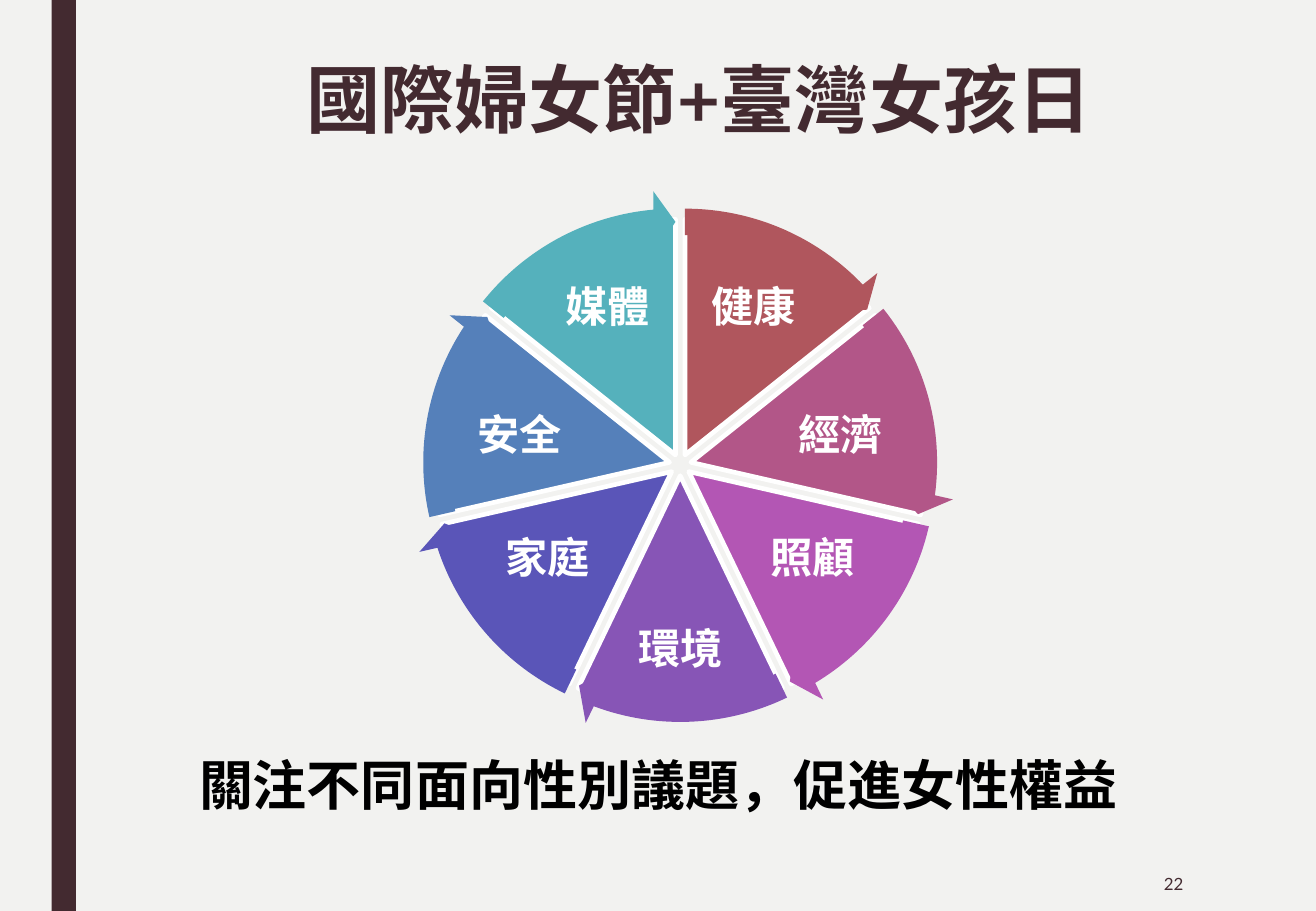
import math

from pptx import Presentation
from pptx import util as u
from pptx.dml.color import RGBColor
from pptx.enum import shapes, text

HUES = {
    "back": "F2F2F0", "dark": "432A30", "white": "FFFFFF", "black": "000000",
    "健康": "B0565D", "經濟": "B25688", "照顧": "B356B4", "環境": "8755B6",
    "家庭": "5A55B8", "安全": "5580BA", "媒體": "55B1BC",
}
TOPICS = ["健康", "經濟", "照顧", "環境", "家庭", "安全", "媒體"]
SPOTS = [(3.6, 15.24, 5.52, 4.44), (7.92, 21.57, 6.36, 3.9),
         (6.54, 27.66, 5.52, 4.32), (0, 32.13, 5.4, 3.9)]
COLS, ROWS, CELL = 65, 45, u.Inches(1) / 6
MID_X, MID_Y, SHIFT = 33.6, 22.96, 0.54
PIE, RING = 23.28, 26.16
TURN, TOP = 216, 162
STEP = TURN / len(TOPICS)


class Deck:
    """Draws styled elements on one slide laid out in square grid cells."""

    def __init__(self):
        self.prs = Presentation()
        self.prs.slide_width = self.cells(COLS)
        self.prs.slide_height = self.cells(ROWS)
        self.slide = self.prs.slides.add_slide(self.prs.slide_layouts[6])
        fill = self.slide.background.fill
        fill.solid()
        fill.fore_color.rgb = self.hue("back")

    def cells(self, count):
        return u.Emu(round(count * CELL))

    def hue(self, name):
        return RGBColor.from_string(HUES[name])

    def shape(self, kind, box, fill, adjust=(), edge=0):
        item = self.slide.shapes.add_shape(kind, *map(self.cells, box))
        item.shadow.inherit = False
        item.fill.solid()
        item.fill.fore_color.rgb = self.hue(fill)
        for i, value in enumerate(adjust):
            item.adjustments[i] = value
        if edge:
            item.line.color.rgb = self.hue("white")
            item.line.width = u.Pt(edge)
        else:
            item.line.fill.background()

    def words(self, box, copy, size, hue, align="LEFT", face="Lato", bold=True,
              middle=False, space=1, inset=None, wrap=True):
        frame = self.slide.shapes.add_textbox(*map(self.cells, box)).text_frame
        frame.word_wrap = wrap
        if not wrap:
            frame.auto_size = text.MSO_AUTO_SIZE.SHAPE_TO_FIT_TEXT
        if middle:
            frame.vertical_anchor = text.MSO_ANCHOR.MIDDLE
        if inset is not None:
            frame.margin_left = frame.margin_right = self.cells(inset)
            frame.margin_top = frame.margin_bottom = self.cells(inset)
        frame.text = copy
        para = frame.paragraphs[0]
        para.alignment = text.PP_ALIGN[align]
        para.line_spacing = space
        font = para.runs[0].font
        font.name, font.size, font.bold = face, u.Pt(size), bold
        font.color.rgb = self.hue(hue)

    def disc(self, kind, index, size, adjust, edge=0):
        angle = math.radians((index + 0.5) * 360 / len(TOPICS) - 90)
        left = MID_X + SHIFT * math.cos(angle) - size / 2
        top = MID_Y + SHIFT * math.sin(angle) - size / 2
        self.shape(kind, (left, top, size, size), TOPICS[index], adjust, edge)

    def slice(self, index):
        start = (TOP + index * STEP) % TURN
        ends = (start, (start + STEP) % TURN)
        self.disc(shapes.MSO_SHAPE.PIE, index, PIE, ends, 2.75)
        across, y, wide, high = SPOTS[min(index, len(TOPICS) - 1 - index)]
        x = MID_X + (across if index < len(TOPICS) / 2 else -across)
        self.words((x - wide / 2, y - high / 2, wide, high), TOPICS[index], 25,
                   "white", "CENTER", middle=True, space=0.9, inset=0.2)

    def arrow(self, index):
        start = (TOP + index * STEP) % TURN
        adjust = (0.05, 3.28, (start + 27.58) % TURN, start, 0.06)
        self.disc(shapes.MSO_SHAPE.CIRCULAR_ARROW, index, RING, adjust)


def main():
    deck = Deck()
    deck.shape(shapes.MSO_SHAPE.RECTANGLE, (2.55, 0, 1.2, ROWS), "dark")
    deck.words((8.94, 2.88, 51.18, 9.72), "國際婦女節+臺灣女孩日", 44, "dark",
               "CENTER", space=0.89)
    for index in range(len(TOPICS)):
        deck.slice(index)
    for index in range(len(TOPICS)):
        deck.arrow(index)
    deck.words((9.24, 36.84, 46.98, 3.84), "關注不同面向性別議題，促進女性權益",
               32, "black", face="Arial", wrap=False)
    deck.words((50.52, 42.36, 8.52, 2.64), "22", 10, "dark", "RIGHT",
               bold=False, middle=True)
    deck.prs.save("out.pptx")


if __name__ == "__main__":
    main()
